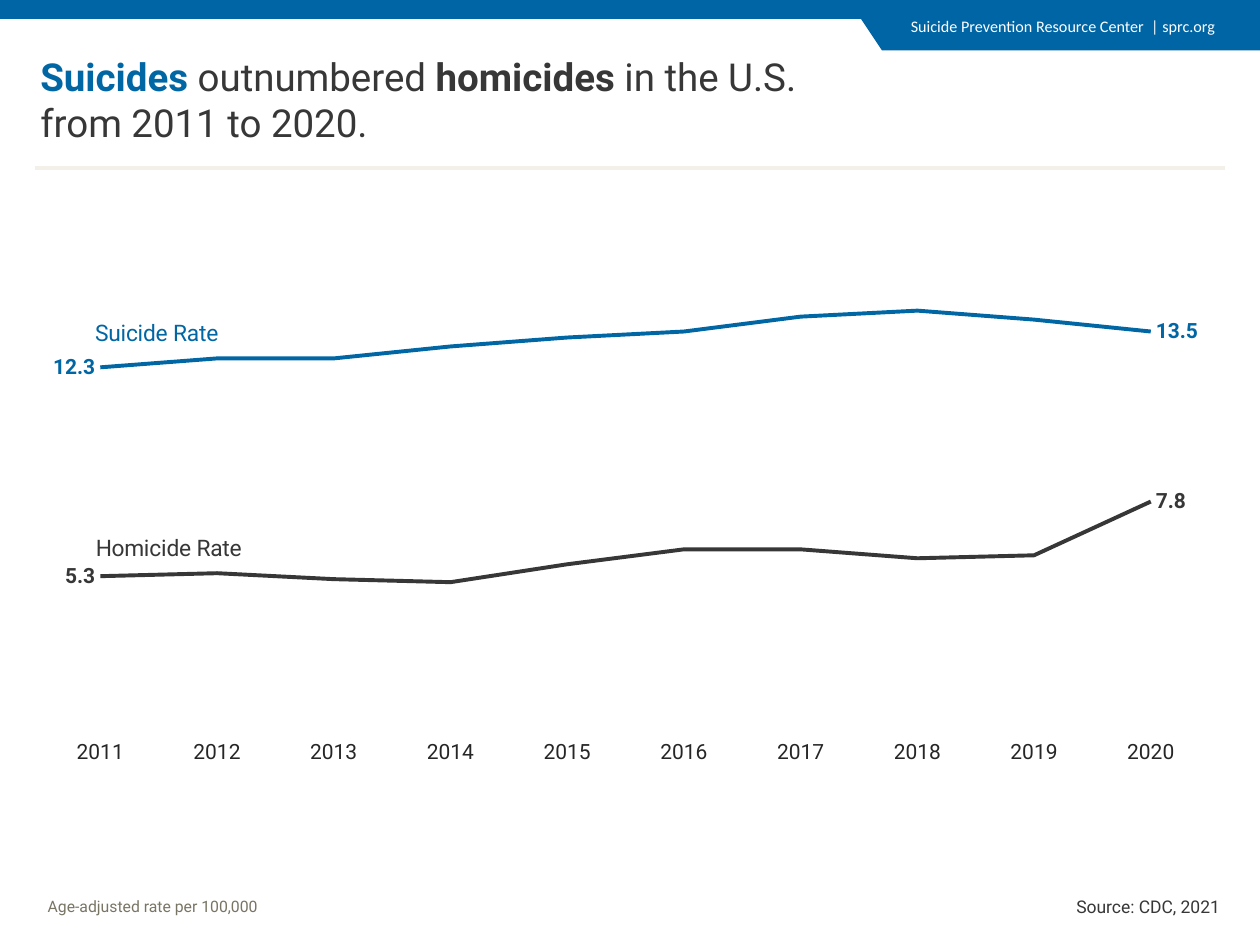
from dataclasses import dataclass
from typing import Optional

from lxml.etree import SubElement
from pptx import Presentation
from pptx.chart.data import CategoryChartData
from pptx.dml.color import RGBColor
from pptx.enum.chart import XL_CHART_TYPE as ChartType, XL_LABEL_POSITION as LabelPos
from pptx.enum.chart import XL_TICK_MARK as TickMark
from pptx.enum.shapes import MSO_CONNECTOR as Connector, MSO_SHAPE as Preset
from pptx.enum.text import MSO_ANCHOR as Anchor, MSO_AUTO_SIZE as AutoSize, PP_ALIGN as Align
from pptx.oxml import parse_xml
from pptx.oxml.ns import nsdecls, qn
from pptx.util import Inches, Pt

BLUE = RGBColor(0x00, 0x65, 0xA4)
SUICIDE_BLUE = RGBColor(0x00, 0x66, 0xA4)
CHARCOAL = RGBColor(0x37, 0x37, 0x37)
YEAR_GREY = RGBColor(0x26, 0x26, 0x26)
NOTE_GREY = RGBColor(0x78, 0x75, 0x65)
RULE_CREAM = RGBColor(0xF3, 0xF0, 0xEA)
WHITE = RGBColor(0xFF, 0xFF, 0xFF)

# The slide is a grid of 100 columns by 75 rows
WIDTH, HEIGHT = Inches(10), Inches(7.5)
COLUMN, ROW = WIDTH / 100, HEIGHT / 75


@dataclass(frozen=True)
class Area:
    column: float
    row: float
    columns: float
    rows: float

    def emu(self) -> tuple:
        return (round(self.column * COLUMN), round(self.row * ROW),
                round(self.columns * COLUMN), round(self.rows * ROW))


@dataclass(frozen=True)
class Phrase:
    text: str
    size: float
    color: RGBColor
    font: str = "Roboto"
    bold: bool = False


@dataclass(frozen=True)
class Caption:
    phrase: Phrase
    area: Area
    align: Align = Align.LEFT


@dataclass(frozen=True)
class Rate:
    name: str
    values: tuple
    color: RGBColor
    name_shift: tuple  # share of the chart's width and height


CAPTIONS = (
    Caption(Phrase("Suicide Prevention Resource Center  | sprc.org", 9.2, WHITE, "Calibri"),
            Area(71.3, 0.8, 29.5, 4.1)),
    Caption(Phrase("Source: CDC, 2021", 10, CHARCOAL), Area(83.5, 70.6, 14.3, 2.7), Align.RIGHT),
    Caption(Phrase("Age-adjusted rate per 100,000", 9, NOTE_GREY), Area(2.8, 70.7, 21.3, 2.5)),
)
HEADLINE = (
    Phrase("Suicides ", 22, SUICIDE_BLUE, bold=True),
    Phrase("outnumbered ", 22, CHARCOAL),
    Phrase("homicides ", 22, CHARCOAL, bold=True),
    Phrase("in the U.S. from 2011 to 2020.", 22, CHARCOAL),
)
RATES = (
    Rate("Suicide Rate", (12.3, 12.6, 12.6, 13, 13.3, 13.5, 14, 14.2, 13.9, 13.5),
         SUICIDE_BLUE, (-0.05, -0.01)),
    Rate("Homicide Rate", (5.3, 5.4, 5.2, 5.1, 5.7, 6.2, 6.2, 5.9, 6, 7.8),
         CHARCOAL, (-0.04, -0.01)),
)


def set_all(target, formats: dict) -> None:
    for attribute, value in formats.items():
        setattr(target, attribute, value)


def style_font(font, size: float, color: RGBColor, name: str = "Roboto",
               bold: bool = False) -> None:
    set_all(font, {"size": Pt(size), "name": name, "bold": bold})
    font.color.rgb = color


def write(paragraph, phrase: Phrase) -> None:
    run = paragraph.add_run()
    run.text = phrase.text
    style_font(run.font, phrase.size, phrase.color, phrase.font, phrase.bold)


def paint(shape, color: RGBColor) -> None:
    shape.shadow.inherit = False
    shape.fill.solid()
    shape.fill.fore_color.rgb = color
    shape.line.fill.background()


def add_banner(slide) -> None:
    paint(slide.shapes.add_shape(Preset.RECTANGLE, *Area(0, 0, 100, 1.5).emu()), BLUE)
    outline = slide.shapes.build_freeform(100, 1, scale=(COLUMN, ROW))
    outline.add_line_segments([(100, 4.2), (69.9, 4.2), (67.7, 1)], close=True)
    paint(outline.convert_to_shape(), BLUE)


def add_caption(slide, caption: Caption) -> None:
    frame = slide.shapes.add_textbox(*caption.area.emu()).text_frame
    frame.word_wrap = True
    frame.paragraphs[0].alignment = caption.align
    write(frame.paragraphs[0], caption.phrase)


def add_headline(slide) -> None:
    title = slide.shapes.title
    place = Area(2.2, 3.7, 67, 10.3).emu()
    set_all(title, dict(zip(("left", "top", "width", "height"), place)))
    set_all(title.text_frame, {"word_wrap": True, "auto_size": AutoSize.NONE,
                               "vertical_anchor": Anchor.TOP})
    paragraph = title.text_frame.paragraphs[0]
    paragraph.alignment = Align.LEFT
    for phrase in HEADLINE:
        write(paragraph, phrase)


def add_rule(slide) -> None:
    left, top, width, _ = Area(2.8, 13.3, 94.4, 0).emu()
    rule = slide.shapes.add_connector(Connector.STRAIGHT, left, top, left + width, top)
    rule.line.color.rgb = RULE_CREAM
    rule.line.width = Pt(2.25)
    SubElement(rule._element.spPr, qn("a:effectLst"))


def manual_layout(**settings):
    items = "".join(f'<c:{key} val="{value}"/>' for key, value in settings.items())
    return parse_xml(f'<c:layout {nsdecls("c")}><c:manualLayout>{items}'
                     '</c:manualLayout></c:layout>')


def style_rate(series, rate: Rate) -> None:
    series.smooth = False
    series.format.line.color.rgb = rate.color
    series.format.line.width = Pt(2.25)
    series.data_labels.show_value = False
    # First and last values, with the series name over the second point
    last = len(rate.values) - 1
    for index, position, size, bold in ((0, LabelPos.LEFT, 12, True),
                                        (1, LabelPos.ABOVE, 13, False),
                                        (last, LabelPos.RIGHT, 12, True)):
        label = series.points[index].data_label
        style_font(label.font, size, rate.color, bold=bold)
        label.position = position
    name_label = series._element.xpath('c:dLbls/c:dLbl[c:idx/@val="1"]')[0]
    name_label.find(qn("c:showVal")).set("val", "0")
    name_label.find(qn("c:showSerName")).set("val", "1")
    shift_x, shift_y = rate.name_shift
    name_label.find(qn("c:idx")).addnext(manual_layout(x=shift_x, y=shift_y))


def add_rate_chart(slide) -> None:
    rates = CategoryChartData()
    rates.categories = [str(year) for year in range(2011, 2021)]
    for rate in RATES:
        rates.add_series(rate.name, rate.values)
    place = Area(1.7, 14.1, 96, 50.8).emu()
    chart = slide.shapes.add_chart(ChartType.LINE, *place, rates).chart
    set_all(chart, {"has_legend": False, "has_title": False})
    style_font(chart.font, 10, CHARCOAL, "Cabin")
    chart.plots[0].vary_by_categories = False

    set_all(chart.value_axis, {"minimum_scale": 0, "maximum_scale": 16,
                               "has_major_gridlines": False, "visible": False})
    years = chart.category_axis
    set_all(years, {"major_tick_mark": TickMark.NONE, "has_major_gridlines": False})
    years.format.line.fill.background()
    style_font(years.tick_labels.font, 12, YEAR_GREY)

    for series, rate in zip(chart.plots[0].series, RATES):
        style_rate(series, rate)

    # Fixed inner plot area
    plot_area = chart._chartSpace.chart.plotArea
    for layout in plot_area.findall(qn("c:layout")):
        plot_area.remove(layout)
    plot_area.insert(0, manual_layout(layoutTarget="inner", xMode="edge", yMode="edge",
                                      x=0.017, y=0.124, w=0.965, h=0.746))


def main() -> None:
    deck = Presentation()
    set_all(deck, {"slide_width": WIDTH, "slide_height": HEIGHT})
    slide = deck.slides.add_slide(deck.slide_layouts.get_by_name("Title Only"))
    add_banner(slide)
    add_rate_chart(slide)
    add_headline(slide)
    add_rule(slide)
    for caption in CAPTIONS:
        add_caption(slide, caption)
    deck.save("out.pptx")


if __name__ == "__main__":
    main()
